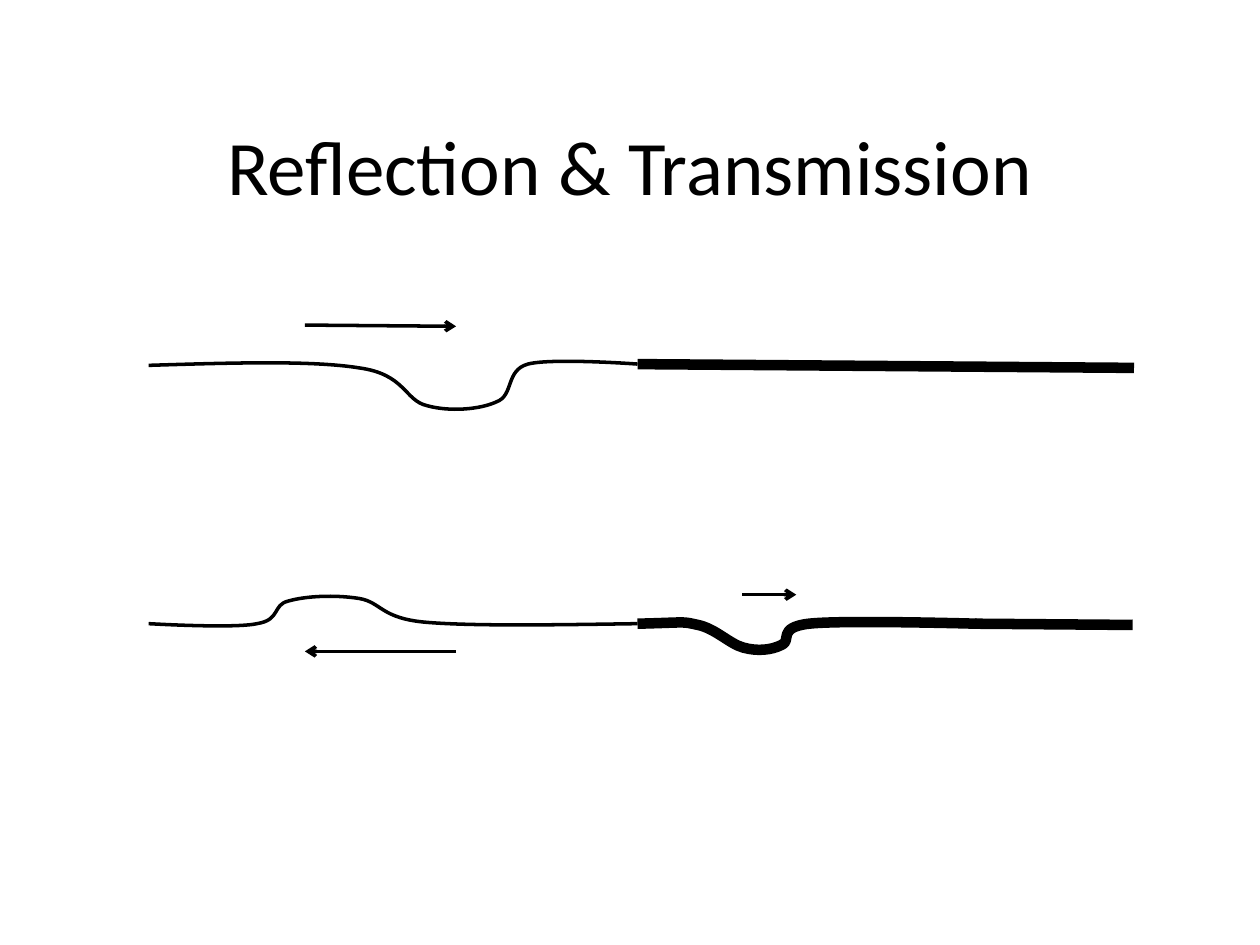
from dataclasses import dataclass

from lxml import etree
from pptx import Presentation
from pptx import util as u
from pptx.dml.color import RGBColor
from pptx.enum import shapes, text
from pptx.oxml.ns import qn

BLACK = "000000"
THIN, THICK = 2, 6  # light string, heavy string

Point = tuple[float, float]


@dataclass
class Line:
    start: Point
    end: Point
    width: float = THIN
    arrow: bool = False


@dataclass
class Curve:
    start: Point
    controls: list[Point]  # three points for each Bézier segment
    width: float = THIN


def color(value: str) -> RGBColor:
    return RGBColor.from_string(value)


def to_lengths(point: Point) -> tuple[u.Length, u.Length]:
    x, y = point
    return u.Inches(x), u.Inches(y)


def style_line(shape, width: float) -> None:
    shape.line.color.rgb = color(BLACK)
    shape.line.width = u.Pt(width)


def draw_line(container, line: Line) -> None:
    connector = container.add_connector(
        shapes.MSO_CONNECTOR.STRAIGHT, *to_lengths(line.start), *to_lengths(line.end)
    )
    style_line(connector, line.width)
    properties = connector._element.spPr
    if line.arrow:
        outline = properties.find(qn("a:ln"))
        etree.SubElement(outline, qn("a:tailEnd"), type="arrow")
    etree.SubElement(properties, qn("a:effectLst"))


def draw_curve(container, curve: Curve) -> None:
    builder = container.build_freeform(*to_lengths(curve.start))
    builder.add_line_segments([to_lengths(point) for point in curve.controls], close=False)
    shape = builder.convert_to_shape()
    shape.shadow.inherit = False
    shape.fill.background()
    style_line(shape, curve.width)

    # Turn each run of three line points into one Bézier segment
    outline = next(shape._element.iter(qn("a:path")))
    corners = outline.findall(qn("a:lnTo"))
    for index in range(0, len(corners), 3):
        segment = etree.SubElement(outline, qn("a:cubicBezTo"))
        for corner in corners[index:index + 3]:
            segment.append(corner[0])
            outline.remove(corner)


def draw_all(container, parts: list[Line | Curve]) -> None:
    for part in parts:
        if isinstance(part, Line):
            draw_line(container, part)
        else:
            draw_curve(container, part)


def set_text(shape, content: str, *, size: float, font: str, fill: str) -> None:
    frame = shape.text_frame
    frame.text = content
    frame.vertical_anchor = text.MSO_ANCHOR.MIDDLE
    paragraph = frame.paragraphs[0]
    paragraph.alignment = text.PP_ALIGN.CENTER
    run_font = paragraph.runs[0].font
    run_font.size = u.Pt(size)
    run_font.name = font
    run_font.color.rgb = color(fill)


# Pulse travelling towards the heavy string
INCIDENT = [
    Line((5.06, 2.89), (9, 2.92), THICK),
    Line((2.42, 2.58), (3.62, 2.59), arrow=True),
    Curve((1.18, 2.9), [
        (1.83, 2.88), (2.48, 2.86), (2.85, 2.92),
        (3.22, 2.97), (3.21, 3.18), (3.39, 3.22),
        (3.57, 3.27), (3.81, 3.25), (3.94, 3.19),
        (4.08, 3.14), (4.01, 2.94), (4.19, 2.89),
        (4.38, 2.84), (5.06, 2.89), (5.06, 2.89),
    ]),
]

# Inverted pulse going back along the light string
REFLECTED = [
    Curve((5.06, 4.95), [
        (4.41, 4.96), (3.76, 4.97), (3.39, 4.94),
        (3.02, 4.91), (3.03, 4.78), (2.85, 4.75),
        (2.66, 4.72), (2.43, 4.73), (2.29, 4.77),
        (2.16, 4.8), (2.23, 4.92), (2.04, 4.95),
        (1.86, 4.99), (1.18, 4.95), (1.18, 4.95),
    ]),
    Line((3.62, 5.17), (2.42, 5.17), arrow=True),
]

# Smaller pulse going on along the heavy string
TRANSMITTED = [
    Curve((5.06, 4.95), [
        (5.48, 4.94), (5.4, 4.93), (5.54, 4.96),
        (5.68, 4.99), (5.79, 5.11), (5.9, 5.14),
        (6.01, 5.17), (6.12, 5.16), (6.2, 5.12),
        (6.29, 5.09), (6.16, 4.98), (6.42, 4.95),
        (6.68, 4.92), (7.75, 4.95), (7.75, 4.95),
    ], THICK),
    Line((5.89, 4.72), (6.32, 4.72), arrow=True),
    Line((7.74, 4.95), (8.99, 4.96), THICK),
]


def main() -> None:
    presentation = Presentation()
    presentation.slide_width = u.Inches(10)
    presentation.slide_height = u.Inches(7.5)
    slide = presentation.slides.add_slide(presentation.slide_layouts[0])

    # Title, without the subtitle
    subtitle = slide.placeholders[1]._element
    subtitle.getparent().remove(subtitle)
    title = slide.shapes.title
    title.left, title.top = u.Inches(0.75), u.Inches(0.5)
    title.width, title.height = u.Inches(8.5), u.Inches(1.61)
    set_text(title, "Reflection & Transmission", size=44, font="Calibri", fill=BLACK)

    # Strings before and after the pulse meets the junction
    draw_all(slide.shapes, INCIDENT)
    for pulse in (REFLECTED, TRANSMITTED):
        draw_all(slide.shapes.add_group_shape().shapes, pulse)

    presentation.save("out.pptx")


if __name__ == "__main__":
    main()
